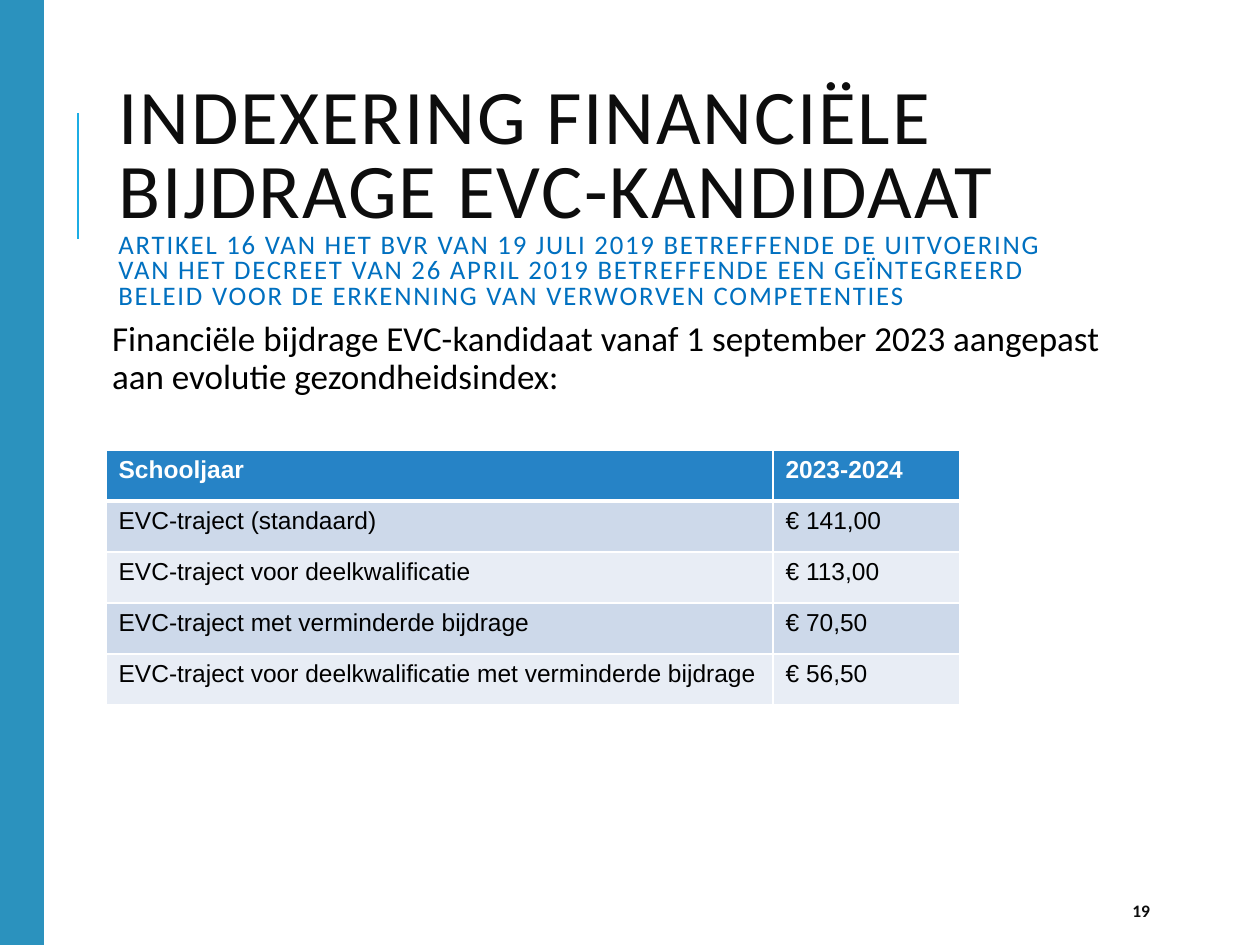
from lxml.etree import SubElement
from pptx import Presentation
from pptx.dml.color import RGBColor
from pptx.enum.shapes import MSO_CONNECTOR, MSO_SHAPE
from pptx.enum.text import MSO_ANCHOR
from pptx.oxml.ns import qn
from pptx.util import Pt

# Content
TITLE = "INDEXERING FINANCIËLE BIJDRAGE EVC-KANDIDAAT"
SUBTITLE = ("ARTIKEL 16 VAN HET BVR VAN 19 JULI 2019 BETREFFENDE DE UITVOERING "
            "VAN HET DECREET VAN 26 APRIL 2019 BETREFFENDE EEN GEÏNTEGREERD "
            "BELEID VOOR DE ERKENNING VAN VERWORVEN COMPETENTIES")
INTRO = ("Financiële bijdrage EVC-kandidaat vanaf 1 september 2023 aangepast "
         "aan evolutie gezondheidsindex:")
PAGE_NUMBER = "19"
FEES = [
    ("Schooljaar", "2023-2024"),
    ("EVC-traject (standaard)", "€ 141,00"),
    ("EVC-traject voor deelkwalificatie", "€ 113,00"),
    ("EVC-traject met verminderde bijdrage", "€ 70,50"),
    ("EVC-traject voor deelkwalificatie met verminderde bijdrage", "€ 56,50"),
]

# Layout in px, 126 to the inch
SCALE = 914400 / 126
LEFT, TEXT_WIDTH = 106, 1004
COLUMNS = (667, 187)
ROW_HEIGHT = 51
HEADER_FILL, BAND_FILLS = "2683C6", ("CDD9EA", "E8EDF5")


def px(length):
    return round(length * SCALE)


def color(value):
    return RGBColor.from_string(value)


def add_run(paragraph, text, size, ink, font="Calibri", bold=False, spacing=None):
    run = paragraph.add_run()
    run.text = text
    run.font.name, run.font.size, run.font.bold = font, Pt(size), bold
    run.font.color.rgb = color(ink)
    if spacing:
        run.font._element.set("spc", str(spacing * 100))


def add_text_frame(slide, left, top, width, height, anchor):
    frame = slide.shapes.add_textbox(px(left), px(top), px(width), px(height)).text_frame
    frame.word_wrap = True
    frame.vertical_anchor = anchor
    return frame


def set_borders(cell, bottom):
    properties = cell._tc.get_or_add_tcPr()
    sides = (("a:lnL", 1), ("a:lnR", 1), ("a:lnT", 1), ("a:lnB", bottom))
    for position, (side, width) in enumerate(sides):
        line = SubElement(properties, qn(side), w=str(Pt(width)))
        fill = SubElement(line, qn("a:solidFill"))
        SubElement(fill, qn("a:srgbClr"), val="FFFFFF")
        properties.insert(position, line)


def add_fee_table(slide, left, top):
    table = slide.shapes.add_table(
        len(FEES), len(COLUMNS), px(left), px(top),
        px(sum(COLUMNS)), px(ROW_HEIGHT * len(FEES))).table
    for column, width in zip(table.columns, COLUMNS):
        column.width = px(width)
    for row, texts in enumerate(FEES):
        header = row == 0
        for column, text in enumerate(texts):
            cell = table.cell(row, column)
            cell.fill.solid()
            cell.fill.fore_color.rgb = color(
                HEADER_FILL if header else BAND_FILLS[(row - 1) % 2])
            set_borders(cell, bottom=3 if header else 1)
            add_run(cell.text_frame.paragraphs[0], text, 14,
                    "FFFFFF" if header else "000000", "Arial", header)


def main():
    deck = Presentation()
    deck.slide_width, deck.slide_height = px(1260), px(945)
    slide = deck.slides.add_slide(deck.slide_layouts[6])

    # Side band and title rule
    band = slide.shapes.add_shape(MSO_SHAPE.RECTANGLE, 0, 0, px(44), px(945))
    band.shadow.inherit = False
    band.fill.solid()
    band.fill.fore_color.rgb = color("2B92BE")
    band.line.fill.background()
    rule = slide.shapes.add_connector(
        MSO_CONNECTOR.STRAIGHT, px(78), px(239), px(78), px(113))
    rule.line.color.rgb = color("1CADE4")
    rule.line.width = Pt(1.5)
    SubElement(rule._element.spPr, qn("a:effectLst"))

    # Title with its legal reference
    heading = add_text_frame(
        slide, LEFT, 81, TEXT_WIDTH, 234, MSO_ANCHOR.MIDDLE).paragraphs[0]
    heading.line_spacing = 0.8
    add_run(heading, TITLE, 44.1, "0D0D0D", spacing=1)
    heading.add_line_break()
    add_run(heading, SUBTITLE, 15.3, "0070C0", spacing=1)

    # Introduction
    intro_frame = add_text_frame(slide, LEFT, 315, TEXT_WIDTH, 554, MSO_ANCHOR.TOP)
    intro_frame.margin_left = intro_frame.margin_right = px(6)
    intro_frame.margin_top = intro_frame.margin_bottom = px(6)
    intro = intro_frame.paragraphs[0]
    intro.line_spacing = 0.9
    intro.space_before, intro.space_after = Pt(2), Pt(4)
    add_run(intro, INTRO, 20, "000000")

    # Page number
    number = add_text_frame(slide, 1120, 892, 101, 38, MSO_ANCHOR.MIDDLE).paragraphs[0]
    add_run(number, PAGE_NUMBER, 10, "0D0D0D", bold=True)

    add_fee_table(slide, LEFT, 450)
    deck.save("out.pptx")


if __name__ == "__main__":
    main()
